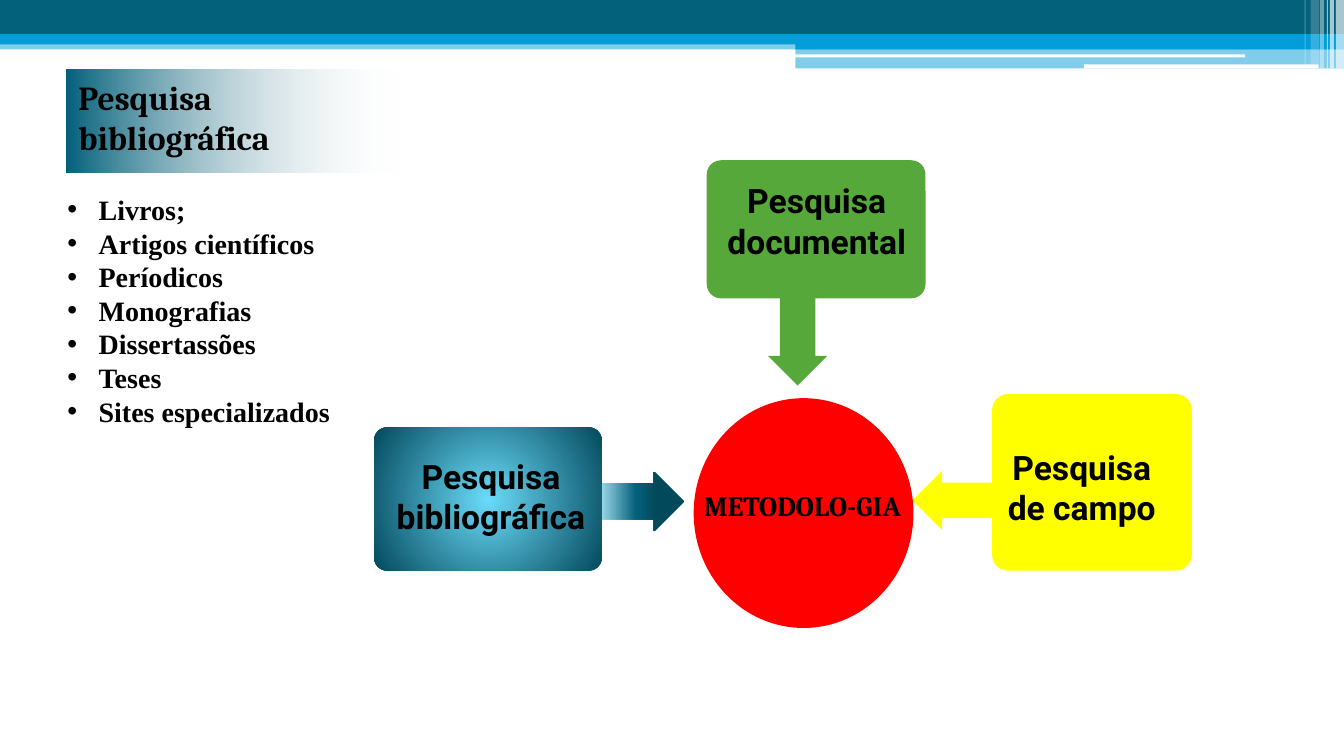
"""Builds the research methodology slide."""
from lxml.etree import SubElement
from pptx import Presentation
from pptx.dml.color import RGBColor
from pptx.enum.shapes import MSO_SHAPE
from pptx.enum.text import PP_ALIGN
from pptx.oxml.ns import qn
from pptx.util import Inches, Pt

COLUMNS, ROWS = 13.33, 7.5
BLACK = RGBColor(0x00, 0x00, 0x00)
WHITE = RGBColor(0xFF, 0xFF, 0xFF)
MIST = RGBColor(0xF2, 0xF2, 0xF2)
TEAL = RGBColor(0x04, 0x61, 0x7B)
BLUE = RGBColor(0x00, 0x9D, 0xD9)
DEEP = RGBColor(0x03, 0x49, 0x5C)
SKY = RGBColor(0x6B, 0xDB, 0xFA)
PALE = RGBColor(0xB5, 0xED, 0xFD)
GREEN = RGBColor(0x55, 0xA8, 0x39)
YELLOW = RGBColor(0xFF, 0xFF, 0x00)
RED = RGBColor(0xFF, 0x00, 0x00)

BANDS = [
    (0, 0.4, 13.33, 0.09, BLUE, 50),
    (0, 0, 13.33, 0.34, TEAL, 100),
    (0, 0.34, 13.33, 0.1, BLUE, 100),
    (7.89, 0.39, 5.44, 0.1, BLUE, 100),
    (7.89, 0.48, 5.44, 0.2, BLUE, 50),
    (7.88, 0.54, 4.47, 0.03, WHITE, 100),
    (10.75, 0.64, 2.33, 0.04, WHITE, 100),
]
STRIPES = [
    (13.25, 0.08, 0.68, 65),
    (13.19, 0.04, 0.68, 65),
    (13.16, 0.01, 0.68, 60),
    (13.09, 0.04, 0.68, 40),
    (13, 0.08, 0.64, 20),
    (12.94, 0.01, 0.64, 30),
]
SOURCES = ["Livros;", "Artigos científicos", "Períodicos", "Monografias",
           "Dissertassões", "Teses", "Sites especializados"]
TITLE_FADE = [(0, TEAL, 100), (100, MIST, 0)]
ARROW_FADE = [(0, PALE, 100), (46, TEAL, 100), (69, DEEP, 100)]
BOX_GLOW = [(0, SKY, 100), (100, DEEP, 100)]
ARROWS = [
    (7.47, 3.09, 90, GREEN),
    (9.05, 4.67, 180, YELLOW),
    (5.9, 4.68, 0, ARROW_FADE),
]
BOXES = [
    (7.01, 1.59, 2.17, 1.37, 0.103, GREEN),
    (9.84, 3.91, 1.98, 1.75, 0.089, YELLOW),
    (3.71, 4.24, 2.26, 1.42, 0.089, BOX_GLOW),
]
LABELS = [
    (3.67, 4.47, 2.4, "Pesquisa bibliográfica"),
    (6.99, 1.74, 2.22, "Pesquisa documental"),
    (9.8, 4.38, 1.86, "Pesquisa de campo"),
]


class Deck:
    """Holds the style and the slide, on a grid of one-inch columns and rows."""

    cell = Inches(1)

    def __init__(self):
        """Starts the presentation with one blank slide."""
        self.prs = Presentation()
        self.prs.slide_width, self.prs.slide_height = self.grid(COLUMNS, ROWS)
        self.slide = self.prs.slides.add_slide(self.prs.slide_layouts[6])

    def grid(self, *cells):
        """Turns grid units into lengths."""
        return [round(n * self.cell) for n in cells]

    def shape(self, kind, at, fill, alpha=100, adj=(), rotation=0, radial=False):
        """Adds a preset shape with a plain or gradient fill."""
        sp = self.slide.shapes.add_shape(kind, *self.grid(*at))
        sp.shadow.inherit = False
        sp.line.fill.background()
        sp.rotation = rotation
        for i, value in enumerate(adj):
            sp.adjustments[i] = value
        if isinstance(fill, list):
            self.gradient(sp, fill, radial)
        else:
            sp.fill.solid()
            sp.fill.fore_color.rgb = fill
            self.fade(sp.fill._xPr.find(".//" + qn("a:srgbClr")), alpha)
        return sp

    def fade(self, color, alpha):
        """Makes a colour partly transparent."""
        if alpha < 100:
            SubElement(color, qn("a:alpha"), val=str(alpha * 1000))

    def gradient(self, sp, stops, radial):
        """Fills a shape with a linear or circular gradient."""
        sp.fill.gradient()
        grad = sp.fill._xPr.find(qn("a:gradFill"))
        for child in list(grad):
            grad.remove(child)
        stop_list = SubElement(grad, qn("a:gsLst"))
        for pos, rgb, alpha in stops:
            gs = SubElement(stop_list, qn("a:gs"), pos=str(pos * 1000))
            self.fade(SubElement(gs, qn("a:srgbClr"), val=str(rgb)), alpha)
        if radial:
            circle = SubElement(grad, qn("a:path"), path="circle")
            SubElement(circle, qn("a:fillToRect"),
                       {side: "50000" for side in "ltrb"})
        else:
            SubElement(grad, qn("a:lin"), ang="0", scaled="0")

    def text(self, at, lines, font, size, align=PP_ALIGN.CENTER, bullet=False):
        """Adds a bold text box, bulleted if asked."""
        tf = self.slide.shapes.add_textbox(*self.grid(*at)).text_frame
        tf.word_wrap = True
        tf.text = "\n".join(lines)
        for p in tf.paragraphs:
            p.alignment = align
            if bullet:
                p.line_spacing = Pt(24)
                self.bullet(p)
            for r in p.runs:
                r.font.name, r.font.size, r.font.bold = font, Pt(size), True
                r.font.color.rgb = BLACK

    def bullet(self, p):
        """Gives a paragraph a hanging bullet."""
        pPr = p._p.get_or_add_pPr()
        indent = Inches(0.31)
        pPr.set("marL", str(indent))
        pPr.set("indent", str(-indent))
        SubElement(pPr, qn("a:buFont"), typeface="Arial")
        SubElement(pPr, qn("a:buChar"), char="•")


def main():
    """Draws the slide and saves it."""
    deck = Deck()
    for *at, color, alpha in BANDS:
        deck.shape(MSO_SHAPE.RECTANGLE, at, color, alpha)
    for x, width, height, alpha in STRIPES:
        deck.shape(MSO_SHAPE.RECTANGLE, (x, 0, width, height), WHITE, alpha)

    deck.shape(MSO_SHAPE.ROUNDED_RECTANGLE, (0.66, 0.69, 3.3, 1.02),
               TITLE_FADE, adj=[0])
    deck.text((0.68, 0.71, 3.29, 0.91), ["Pesquisa bibliográfica"],
              "Cambria", 24, PP_ALIGN.LEFT)
    deck.text((0.57, 1.86, 2.94, 2.46), SOURCES, "Times New Roman", 20,
              PP_ALIGN.LEFT, bullet=True)

    for x, y, rotation, fill in ARROWS:
        deck.shape(MSO_SHAPE.RIGHT_ARROW, (x, y, 0.88, 0.59), fill,
                   adj=[0.597, 0.5], rotation=rotation)
    for *at, corner, fill in BOXES:
        deck.shape(MSO_SHAPE.ROUNDED_RECTANGLE, at, fill, adj=[corner],
                   radial=True)
    for x, y, width, label in LABELS:
        deck.text((x, y, width, 0.91), [label], "Roboto", 24)

    deck.shape(MSO_SHAPE.OVAL, (6.88, 3.95, 2.18, 2.28), RED)
    deck.text((6.73, 4.8, 2.46, 0.77), ["METODOLO-GIA"], "Cambria", 20)
    deck.prs.save("out.pptx")


if __name__ == "__main__":
    main()
